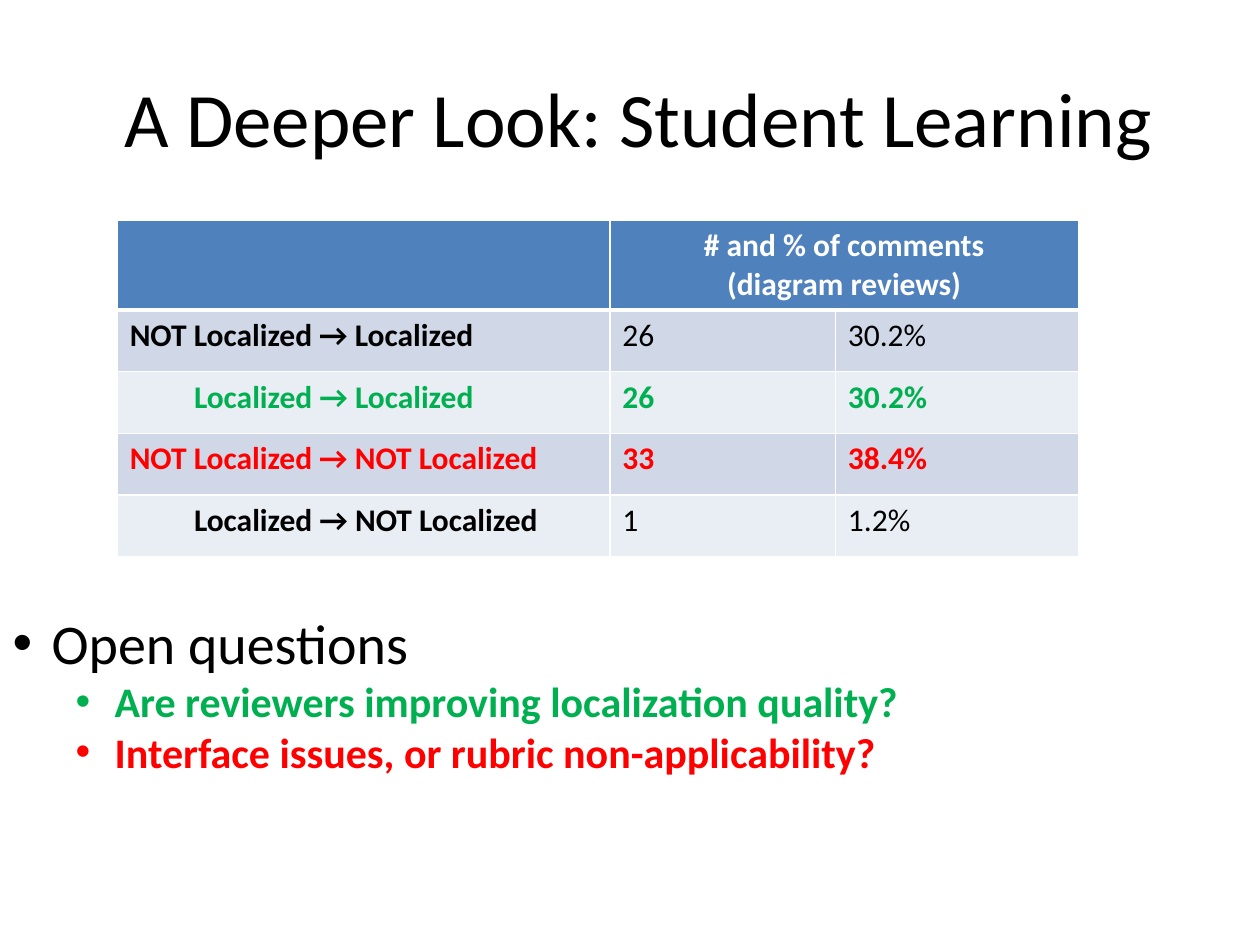
from dataclasses import dataclass

from lxml.etree import SubElement
from pptx import Presentation
from pptx.dml.color import RGBColor
from pptx.enum.text import MSO_ANCHOR, MSO_AUTO_SIZE, PP_ALIGN
from pptx.oxml.ns import qn
from pptx.util import Inches, Pt


@dataclass(frozen=True)
class Theme:
    """Colours, font and type sizes of the slide."""

    font: str = "Calibri"
    black: str = "000000"
    white: str = "FFFFFF"
    green: str = "00B050"
    red: str = "FF0000"
    header: str = "4F81BD"
    bands: tuple = ("D0D8E8", "E9EDF4")
    title: int = 44
    question: int = 32
    answer: int = 24
    cell: int = 18
    rule: int = 1
    header_rule: int = 3


THEME = Theme()
SLIDE_WIDTH, SLIDE_HEIGHT = Inches(10), Inches(7.5)
COLUMN_WIDTHS = (3.91, 1.79, 1.93)
HEADER_HEIGHT, ROW_HEIGHT = 0.7, 0.49
HEADER_LINES = ("# and % of comments", "(diagram reviews)")
SHORT_LABEL_INDENT = 0.51

TRANSITIONS = (
    ("NOT Localized → Localized", "26", "30.2%", THEME.black),
    ("Localized → Localized", "26", "30.2%", THEME.green),
    ("NOT Localized → NOT Localized", "33", "38.4%", THEME.red),
    ("Localized → NOT Localized", "1", "1.2%", THEME.black),
)
QUESTIONS = (
    ("Are reviewers improving localization quality?", THEME.green),
    ("Interface issues, or rubric non-applicability?", THEME.red),
)


def write(paragraph, text, *, size, color=THEME.black, bold=False,
          align=PP_ALIGN.LEFT, level=0, indent=0, hanging=0, bullet=None):
    """Fill a paragraph with one formatted run."""
    run = paragraph.add_run()
    run.text = text
    run.font.name = THEME.font
    run.font.size = Pt(size)
    run.font.bold = bold
    run.font.color.rgb = RGBColor.from_string(color)
    paragraph.alignment = align
    paragraph.level = level
    paragraph.space_before = Pt(0)
    properties = paragraph._p.get_or_add_pPr()
    properties.set("marL", str(Inches(indent)))
    properties.set("indent", str(-Inches(hanging)))
    if bullet:
        SubElement(properties, qn("a:buFont"), typeface="Arial")
        SubElement(properties, qn("a:buChar"), char=bullet)


def place(shape, box):
    """Move a shape to a box of left, top, width and height."""
    shape.left, shape.top, shape.width, shape.height = map(Inches, box)


def style_cell(cell, fill, bottom_rule=THEME.rule):
    """Give a table cell its borders and fill."""
    properties = cell._tc.get_or_add_tcPr()
    for side in "LRTB":
        width = bottom_rule if side == "B" else THEME.rule
        line = SubElement(properties, qn(f"a:ln{side}"), w=str(Pt(width)))
        line_fill = SubElement(line, qn("a:solidFill"))
        SubElement(line_fill, qn("a:srgbClr"), val=THEME.white)
    cell.fill.solid()
    cell.fill.fore_color.rgb = RGBColor.from_string(fill)


def add_title(slide, box):
    """Place the slide title."""
    title = slide.shapes.title
    place(title, box)
    title.text_frame.vertical_anchor = MSO_ANCHOR.MIDDLE
    write(title.text_frame.paragraphs[0], "A Deeper Look: Student Learning",
          size=THEME.title, align=PP_ALIGN.CENTER)


def add_transition_table(slide, box):
    """Place the table of comment counts by localization change."""
    frame = slide.shapes.add_table(
        len(TRANSITIONS) + 1, len(COLUMN_WIDTHS), *map(Inches, box))
    table = frame.table
    for column, width in zip(table.columns, COLUMN_WIDTHS):
        column.width = Inches(width)
    for index, row in enumerate(table.rows):
        row.height = Inches(ROW_HEIGHT if index else HEADER_HEIGHT)

    for cell in table.rows[0].cells:
        style_cell(cell, THEME.header, THEME.header_rule)
    heading = table.cell(0, 1)
    heading.merge(table.cell(0, 2))
    heading_text = heading.text_frame
    heading_text.add_paragraph()
    for paragraph, text in zip(heading_text.paragraphs, HEADER_LINES):
        write(paragraph, text, size=THEME.cell, color=THEME.white, bold=True,
              align=PP_ALIGN.CENTER)

    for row, (*values, color) in enumerate(TRANSITIONS, start=1):
        for column, value in enumerate(values):
            cell = table.cell(row, column)
            style_cell(cell, THEME.bands[(row - 1) % 2])
            is_label = column == 0
            is_short = is_label and not value.startswith("NOT")
            write(cell.text_frame.paragraphs[0], value, size=THEME.cell,
                  color=color, bold=is_label or color != THEME.black,
                  indent=SHORT_LABEL_INDENT if is_short else 0)


def add_open_questions(slide, box):
    """Place the list of open questions in the body placeholder."""
    body = slide.placeholders[1]
    place(body, box)
    text_frame = body.text_frame
    text_frame.auto_size = MSO_AUTO_SIZE.NONE
    write(text_frame.paragraphs[0], "Open questions", size=THEME.question,
          indent=0.31, hanging=0.31, bullet="•")
    for text, color in QUESTIONS:
        write(text_frame.add_paragraph(), text, size=THEME.answer, color=color,
              bold=True, level=1, indent=0.81, hanging=0.31, bullet="•")


def main():
    """Build the slide and save it."""
    presentation = Presentation()
    presentation.slide_width = SLIDE_WIDTH
    presentation.slide_height = SLIDE_HEIGHT
    slide = presentation.slides.add_slide(presentation.slide_layouts[1])
    add_title(slide, (0.14, 0.3, 9.86, 1.25))
    table_height = HEADER_HEIGHT + ROW_HEIGHT * len(TRANSITIONS)
    add_transition_table(slide, (0.93, 1.75, sum(COLUMN_WIDTHS), table_height))
    add_open_questions(slide, (0, 4.78, 10, 1.45))
    presentation.save("out.pptx")


if __name__ == "__main__":
    main()
